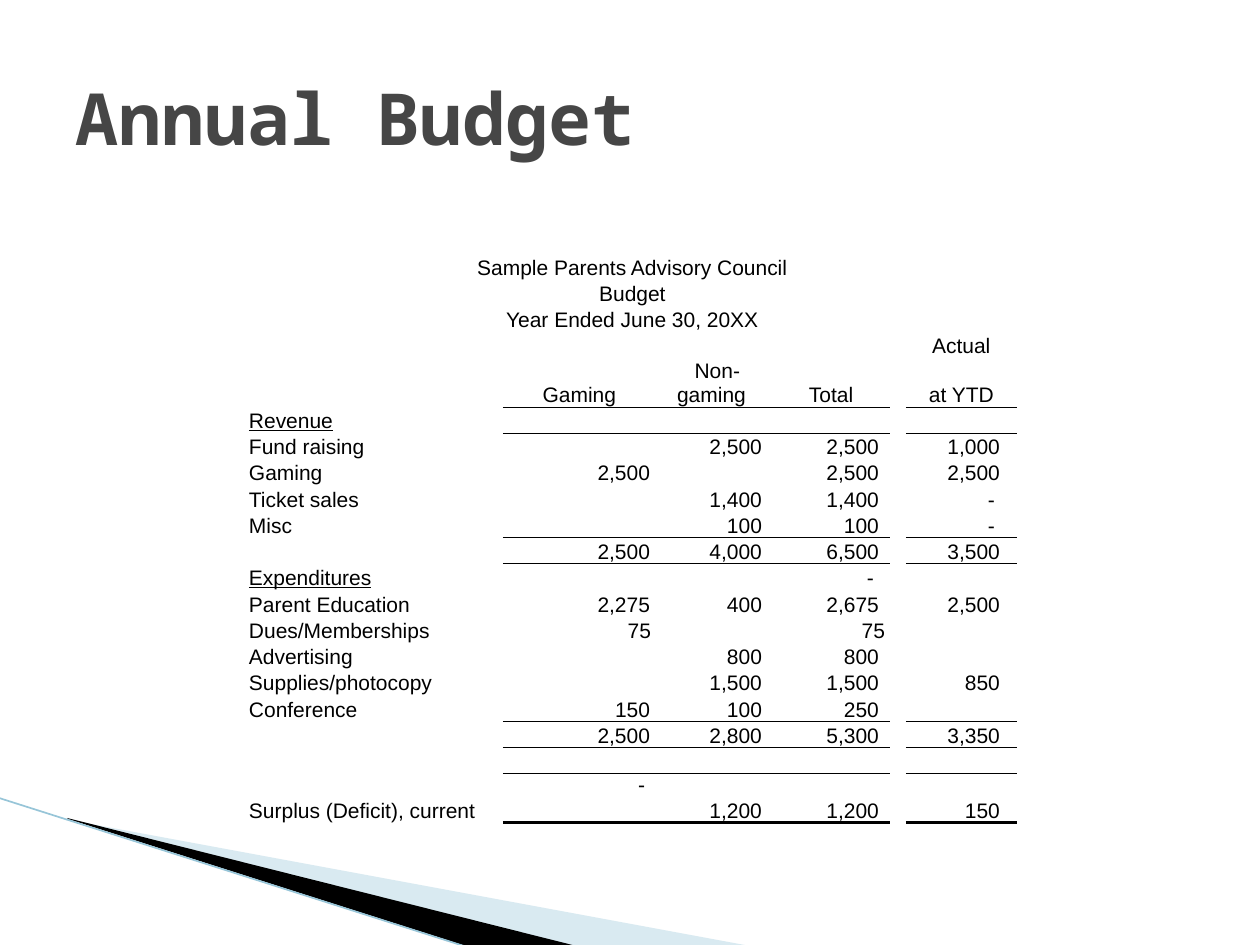
import lxml.etree
import pptx
import pptx.dml.color
import pptx.enum.dml
import pptx.enum.shapes
import pptx.enum.text
import pptx.oxml
import pptx.oxml.ns
import pptx.util

PX = 914400 / 126
ALIGN = pptx.enum.text.PP_ALIGN
ANCHOR = pptx.enum.text.MSO_ANCHOR
THEME = {
    "title": {"name": "Noto Sans Mono", "size": pptx.util.Pt(41), "bold": True},
    "body": {"name": "Arial", "size": pptx.util.Pt(12)},
    "title_ink": "464646",
    "ink": "000000",
    "pale": "A0CBDC",
    "edge": "97C5D8",
    "edge_width": 0.95,
    "thin": 0.5,
    "thick": 2,
    "no_style": "{2D5ABB26-0587-4C30-8999-92F81FD0307C}",
}

HEADING = ["Sample Parents Advisory Council", "Budget", "Year Ended June 30, 20XX"]
COLUMN_HEADS = [
    ("", "", "", "", "Actual"),
    ("", " Gaming ", " Non-gaming ", " Total ", "at YTD"),
]
ENTRIES = [
    ("Revenue", "", "", "", ""),
    ("Fund raising", "", "2,500", "2,500", "1,000"),
    ("Gaming", "2,500", "", "2,500", "2,500"),
    ("Ticket sales", "", "1,400", "1,400", "-"),
    ("Misc", "", "100", "100", "-"),
    ("", "2,500", "4,000", "6,500", "3,500"),
    ("Expenditures", "", "", "-", ""),
    ("Parent Education", "2,275", "400", "2,675", "2,500"),
    ("Dues/Memberships", "75", "", "75", ""),
    ("Advertising", "", "800", "800", ""),
    ("Supplies/photocopy", "", "1,500", "1,500", "850"),
    ("Conference", "150", "100", "250", ""),
    ("", "2,500", "2,800", "5,300", "3,350"),
    ("", "", "", "", ""),
    ("Surplus (Deficit), current", "-", "1,200", "1,200", "150"),
]
SECTIONS = ("Revenue", "Expenditures")
NARROW_LABELS = ("", "Gaming", "Misc")
COLUMN_WIDTHS = [84, 171, 153, 117, 117, 16, 111]
ROW_HEIGHTS = [26] * 4 + [49] + [26, 26, 26, 27] * 3 + [26, 26, 49]
VALUE_COLUMNS = [2, 3, 4, 6]
RIGHT_GAPS = {2: 6, 3: 11, 4: 11, 6: 17}
DASH_GAP = 5
RULES_BELOW = {4: "thin", 9: "thin", 16: "thin", 18: "thin", 19: "thick"}


def px(length):
    """Turn a length in px into EMU."""
    return round(length * PX)


def color(name):
    """Return a theme colour."""
    return pptx.dml.color.RGBColor.from_string(THEME[name])


def apply(target, values):
    """Set each named value on the target."""
    for name, value in values.items():
        setattr(target, name, value)


def write(frame, text, style, ink, align=ALIGN.LEFT, underline=None):
    """Write one styled line, keeping empty lines at the same size."""
    paragraph = frame.paragraphs[0]
    paragraph.alignment = align
    if text:
        run = paragraph.add_run()
        run.text = text
        apply(run.font, {**THEME[style], "underline": underline})
        run.font.color.rgb = color(ink)
    end = lxml.etree.SubElement(paragraph._p, pptx.oxml.ns.qn("a:endParaRPr"))
    end.set("sz", str(int(THEME[style]["size"].pt * 100)))


def rule(cell, side, weight):
    """Draw a black border on the T or B side of a cell."""
    line = pptx.oxml.parse_xml(
        f'<a:ln{side} {pptx.oxml.ns.nsdecls("a")} w="{pptx.util.Pt(THEME[weight])}">'
        f'<a:solidFill><a:srgbClr val="{THEME["ink"]}"/></a:solidFill></a:ln{side}>')
    cell._tc.get_or_add_tcPr().insert(0, line)


def add_swoosh(slide, left, top):
    """Draw the two wedges and the edge line in the lower corner."""
    wedges = [
        ("pale", 40, [(69, 22), (750, 148), (575, 148), (69, 21)]),
        ("ink", 100, [(67, 20), (576, 148), (469, 149), (68, 21)]),
    ]
    for fill, opacity, outline in wedges:
        corners = [(px(left + x), px(top + y)) for x, y in outline]
        builder = slide.shapes.build_freeform(*corners[0])
        builder.add_line_segments(corners[1:])
        wedge = builder.convert_to_shape()
        wedge.shadow.inherit = False
        wedge.fill.solid()
        wedge.fill.fore_color.rgb = color(fill)
        wedge.line.fill.background()
        if opacity < 100:
            tone = wedge._element.spPr.find(".//" + pptx.oxml.ns.qn("a:srgbClr"))
            alpha = lxml.etree.SubElement(tone, pptx.oxml.ns.qn("a:alpha"))
            alpha.set("val", str(opacity * 1000))
    edge = slide.shapes.add_connector(
        pptx.enum.shapes.MSO_CONNECTOR.STRAIGHT,
        px(left - 1), px(top), px(left + 467), px(top + 149))
    edge.line.color.rgb = color("edge")
    edge.line.width = pptx.util.Pt(THEME["edge_width"])
    lxml.etree.SubElement(edge._element.spPr, pptx.oxml.ns.qn("a:effectLst"))


def add_title(slide, left, top, width, height):
    """Write the slide title in its box."""
    box = slide.shapes.add_textbox(px(left), px(top), px(width), px(height))
    apply(box.text_frame, {"word_wrap": True, "vertical_anchor": ANCHOR.MIDDLE})
    write(box.text_frame, "Annual Budget", "title", "title_ink")


def fill_budget(table):
    """Write the headings, labels and amounts of the budget."""
    for row, text in enumerate(HEADING):
        table.cell(row, 0).merge(table.cell(row, len(COLUMN_WIDTHS) - 1))
        write(table.cell(row, 0).text_frame, text, "body", "ink", ALIGN.CENTER)
    first_entry = len(HEADING) + len(COLUMN_HEADS)
    for row, (label, *values) in enumerate(COLUMN_HEADS + ENTRIES, len(HEADING)):
        if label not in NARROW_LABELS:
            table.cell(row, 0).merge(table.cell(row, 1))
        write(table.cell(row, 0).text_frame, label, "body", "ink",
              underline=label in SECTIONS or None)
        for column, value in zip(VALUE_COLUMNS, values):
            cell = table.cell(row, column)
            is_entry = row >= first_entry
            write(cell.text_frame, value, "body", "ink",
                  ALIGN.RIGHT if is_entry else ALIGN.CENTER)
            if is_entry:
                gap = RIGHT_GAPS[column] + (DASH_GAP if value == "-" else 0)
                cell.margin_right = px(5 if value == "75" else gap)
    table.cell(len(ROW_HEIGHTS) - 1, 2).vertical_anchor = ANCHOR.TOP


def add_budget(slide, left, top):
    """Place the budget table with its rules."""
    frame = slide.shapes.add_table(
        len(ROW_HEIGHTS), len(COLUMN_WIDTHS), px(left), px(top),
        px(sum(COLUMN_WIDTHS)), px(sum(ROW_HEIGHTS)))
    table = frame.table
    apply(table, {"first_row": False, "horz_banding": False})
    table._tbl.tblPr.find(pptx.oxml.ns.qn("a:tableStyleId")).text = THEME["no_style"]
    for column, width in zip(table.columns, COLUMN_WIDTHS):
        column.width = px(width)
    for row, height in zip(table.rows, ROW_HEIGHTS):
        row.height = px(height)
    for cell in table.iter_cells():
        apply(cell, {"margin_left": px(1), "margin_right": px(1), "margin_top": 0,
                     "margin_bottom": 0, "vertical_anchor": ANCHOR.BOTTOM})
        cell.fill.background()
    fill_budget(table)
    for cell in table.iter_cells():
        if not cell.text_frame.text and cell._tc.find(".//" + pptx.oxml.ns.qn("a:endParaRPr")) is None:
            write(cell.text_frame, "", "body", "ink")
    for row in range(len(ROW_HEIGHTS)):
        for column in VALUE_COLUMNS:
            for side, ruled_row in (("B", row), ("T", row - 1)):
                if ruled_row in RULES_BELOW:
                    rule(table.cell(row, column), side, RULES_BELOW[ruled_row])


def main():
    """Build the annual budget slide."""
    deck = pptx.Presentation()
    apply(deck, {"slide_width": px(1260), "slide_height": px(945)})
    slide = deck.slides.add_slide(deck.slide_layouts[6])
    add_swoosh(slide, 0, 798)
    add_budget(slide, 248, 254)
    add_title(slide, 63, 38, 1134, 157)
    deck.save("out.pptx")


if __name__ == "__main__":
    main()
